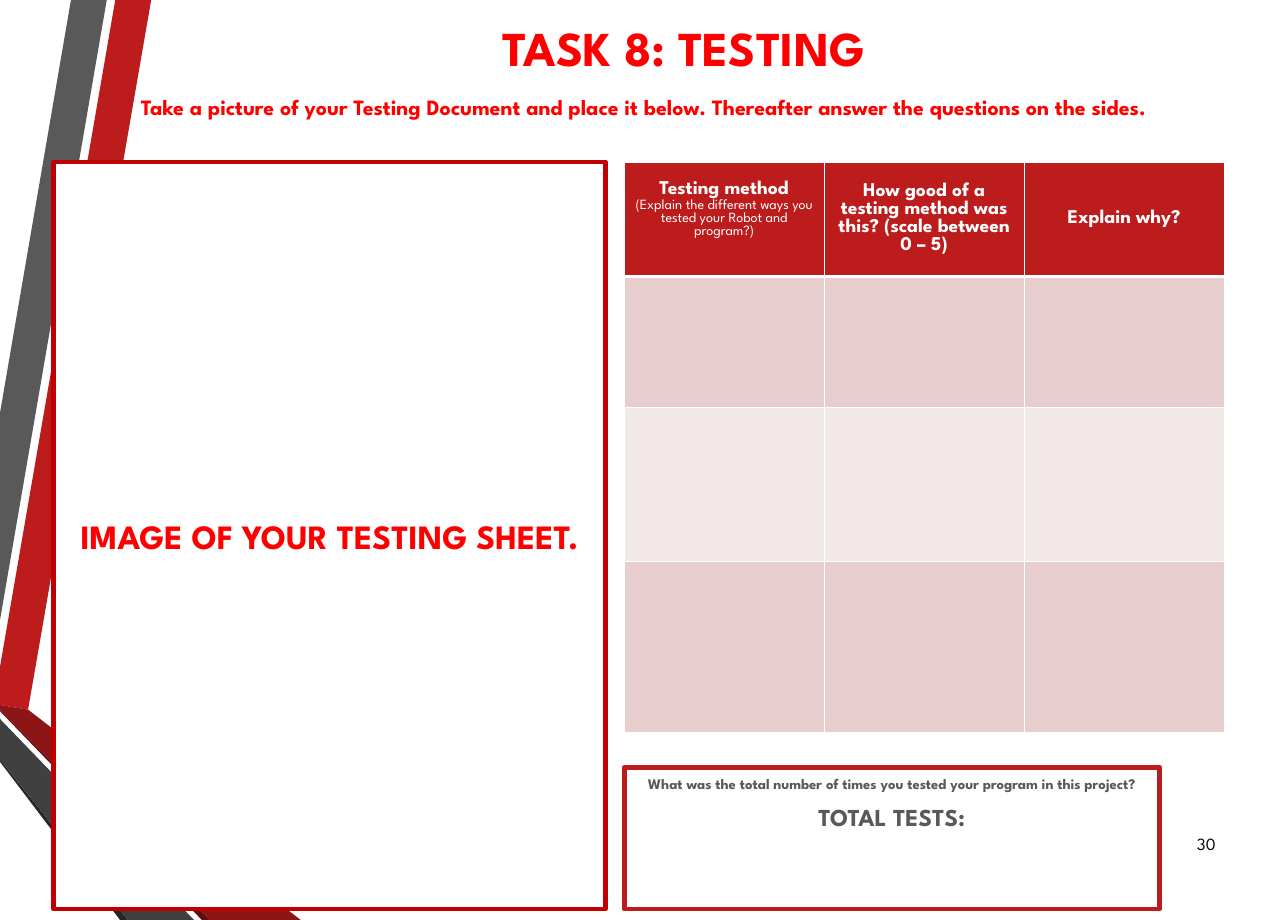
from lxml.etree import SubElement
from pptx import Presentation
from pptx.dml.color import RGBColor
from pptx.enum.shapes import MSO_SHAPE
from pptx.enum.text import MSO_ANCHOR, PP_ALIGN
from pptx.oxml.ns import qn
from pptx.util import Inches, Pt

WIDTH, HEIGHT = Inches(16.53), Inches(11.81)
FONT = "League Spartan"
COLORS = {
    "red": "BC1C1C", "frame": "C00000", "bright": "FF0000", "dark red": "8D1515",
    "deep red": "5E0E0E", "gray": "595959", "dark gray": "404040", "charcoal": "262626",
    "rose": "E7CDCD", "blush": "F3E8E8", "white": "FFFFFF", "black": "000000",
}

# Boxes are left, top, width and height in percent of the slide.
BOXES = {
    "title": (10.34, 1.02, 85.48, 8.13),
    "instruction": (10.34, 6.86, 79.61, 8.64),
    "number": (90.32, 89.08, 4.66, 5.33),
    "sheet": (4.17, 17.61, 42.83, 81.2),
    "methods": (48.46, 17.61, 46.58, 62),
    "total": (48.46, 83.4, 41.56, 15.41),
}
RIBBONS = [
    ("red", [(0, 72.48), (0, 76.63), (2.18, 77.14), (11.74, 0), (8.95, 0)]),
    ("gray", [(8.29, 0), (5.51, 0), (0, 44.88), (0, 67.4)]),
    ("charcoal", [(0, 82.56), (0, 82.81), (9.32, 100), (9.92, 100)]),
    ("deep red", [(0, 77.22), (0, 77.31), (15.67, 100), (16.27, 100)]),
    ("dark red", [(0, 77.22), (16.27, 100), (23.35, 100), (2.18, 77.14), (0, 76.63)]),
    ("dark gray", [(0, 82.56), (9.92, 100), (15.06, 100), (0, 78.15)]),
]
HEADERS = [
    [("Testing method", 18, True),
     ("(Explain the different ways you tested your Robot and program?)", 13, False)],
    [("How good of a testing method was this? (scale between 0 – 5)", 18, True)],
    [("Explain why?", 18, True)],
]
ROW_SHARES = (0.2, 0.23, 0.27, 0.3)
ROW_FILLS = ("red", "rose", "blush", "rose")


def color(name):
    """Return the named colour."""
    return RGBColor.from_string(COLORS[name])


def point(across, down):
    """Turn percentages of the slide into lengths."""
    return round(WIDTH * across / 100), round(HEIGHT * down / 100)


def place(name):
    """Return the lengths of the named box."""
    left, top, width, height = BOXES[name]
    return *point(left, top), *point(width, height)


def assign(target, values):
    """Set each attribute in a dict of format values."""
    for name, value in values.items():
        setattr(target, name, value)


def write(frame, lines, tint, align=PP_ALIGN.CENTER, anchor=MSO_ANCHOR.MIDDLE, **spacing):
    """Fill a text frame with (wording, size, bold) lines."""
    assign(frame, {"word_wrap": True, "vertical_anchor": anchor})
    for index, (wording, size, bold) in enumerate(lines):
        para = frame.add_paragraph() if index else frame.paragraphs[0]
        assign(para, {"alignment": align, **spacing})
        span = para.add_run()
        span.text = wording
        assign(span.font, {"name": FONT, "size": Pt(size), "bold": bold})
        span.font.color.rgb = color(tint)


def add_ribbons(page):
    """Draw the folded ribbons along the left edge."""
    for tint, corners in RIBBONS:
        start, *others = [point(*corner) for corner in corners]
        builder = page.shapes.build_freeform(*start)
        builder.add_line_segments(others, close=True)
        ribbon = builder.convert_to_shape()
        ribbon.shadow.inherit = False
        ribbon.fill.solid()
        ribbon.fill.fore_color.rgb = color(tint)
        ribbon.line.fill.background()


def add_title(page):
    """Place the title at the top."""
    title = page.shapes.title
    assign(title, dict(zip(("left", "top", "width", "height"), place("title"))))
    write(title.text_frame, [("TASK 8: TESTING", 45, True)], "bright")


def add_label(page, name, line, tint, align, **spacing):
    """Add a text box in the named box."""
    label = page.shapes.add_textbox(*place(name))
    write(label.text_frame, [line], tint, align, **spacing)


def add_frame(page, name, edge):
    """Add a white framed panel and return its text frame."""
    panel = page.shapes.add_shape(MSO_SHAPE.RECTANGLE, *place(name))
    panel.shadow.inherit = False
    panel.fill.solid()
    panel.fill.fore_color.rgb = color("white")
    panel.line.color.rgb = color(edge)
    panel.line.width = Pt(4.5)
    return panel.text_frame


def add_borders(cell, widths):
    """Draw white borders, with widths in points by side."""
    properties = cell._tc.get_or_add_tcPr()
    for index, (side, width) in enumerate(widths.items()):
        border = SubElement(properties, qn(f"a:ln{side}"), w=str(Pt(width)))
        fill = SubElement(border, qn("a:solidFill"))
        SubElement(fill, qn("a:srgbClr"), val=COLORS["white"])
        properties.insert(index, border)


def add_methods(page):
    """Add the table of testing methods."""
    box = place("methods")
    table = page.shapes.add_table(len(ROW_SHARES), len(HEADERS), *box).table
    for row, share, tint in zip(table.rows, ROW_SHARES, ROW_FILLS):
        row.height = round(box[3] * share)
        for cell in row.cells:
            cell.fill.solid()
            cell.fill.fore_color.rgb = color(tint)
            add_borders(cell, {"L": 1, "R": 1, "T": 3 if row is table.rows[1] else 1, "B": 1})
    for cell, lines in zip(table.rows[0].cells, HEADERS):
        cell._tc.tcPr.find(qn("a:lnB")).set("w", str(Pt(3)))
        low = 0.06 if len(lines) == 1 else 0.3
        assign(cell, {"margin_left": Inches(0.11), "margin_right": Inches(0.11),
                      "margin_top": Inches(0.06), "margin_bottom": Inches(low)})
        write(cell.text_frame, lines, "white")
        cell.vertical_anchor = MSO_ANCHOR.MIDDLE


def add_total(page):
    """Add the panel for the total number of tests."""
    frame = add_frame(page, "total", "red")
    assign(frame, {"margin_left": Inches(0.15), "margin_right": Inches(0.15),
                   "margin_top": Inches(0.07), "margin_bottom": Inches(0.07)})
    question = "What was the total number of times you tested your program in this project?"
    write(frame, [(question, 13.5, True), ("TOTAL TESTS:", 22.5, True)], "gray",
          anchor=MSO_ANCHOR.TOP, line_spacing=1.1, space_before=Pt(7))


def add_testing_page(deck):
    """Build the testing page."""
    page = deck.slides.add_slide(deck.slide_layouts[5])
    add_ribbons(page)
    add_title(page)
    instruction = ("Take a picture of your Testing Document and place it below. "
                   "Thereafter answer the questions on the sides.")
    add_label(page, "instruction", (instruction, 20.2, True), "bright",
              PP_ALIGN.LEFT, line_spacing=1.3)
    add_label(page, "number", ("30", 15.8, False), "black", PP_ALIGN.RIGHT)
    add_total(page)
    write(add_frame(page, "sheet", "frame"),
          [("IMAGE OF YOUR TESTING SHEET.", 31.5, True)], "bright")
    add_methods(page)


def main():
    """Build and save the deck."""
    deck = Presentation()
    assign(deck, {"slide_width": WIDTH, "slide_height": HEIGHT})
    add_testing_page(deck)
    deck.save("out.pptx")


if __name__ == "__main__":
    main()
